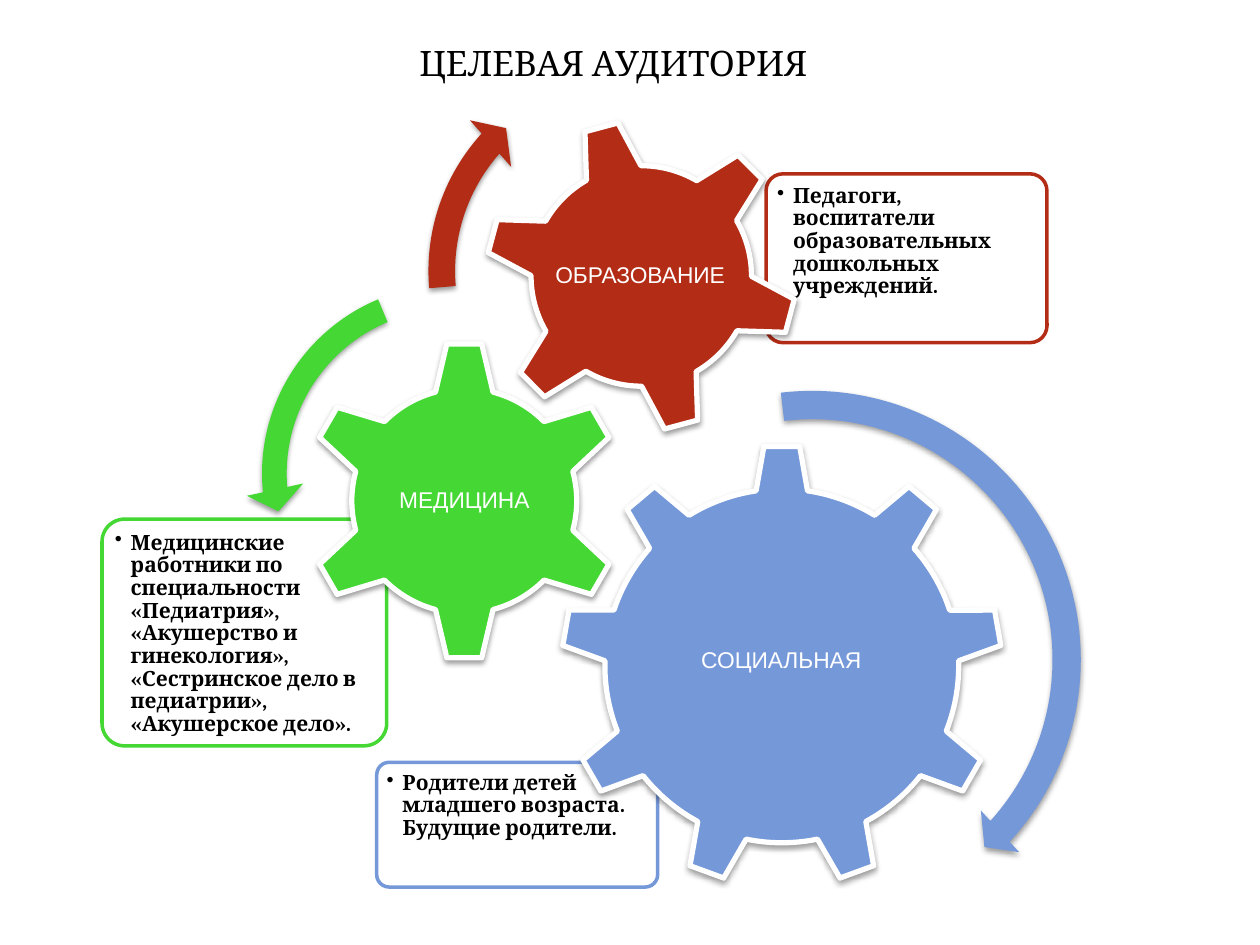
from lxml.etree import SubElement
from pptx import Presentation
from pptx.dml.color import RGBColor as RGB
from pptx.enum.shapes import MSO_SHAPE as Kind
from pptx.enum.text import MSO_ANCHOR as Anchor, PP_ALIGN as Align
from pptx.oxml.ns import qn
from pptx.util import Inches, Pt

theme = {
    "blue": "7598D9", "green": "45D834", "red": "B32C16",
    "white": "FFFFFF", "black": "000000",
    "serif": "Cambria", "sans": "Arial",
    "title": 20, "label": 13, "body": 12,
}

deck = Presentation()
deck.slide_width, deck.slide_height = Inches(10), Inches(7.5)
slide = deck.slides.add_slide(deck.slide_layouts[6])
cell = deck.slide_width / 100  # the grid has 100 columns and 75 rows


def write(shape, text, size, font, tint="black", bold=False, align=Align.LEFT,
          anchor=Anchor.TOP, pad=(0.5, 0.5), gap=0.9, dot=False):
    """Fill a shape with one paragraph; pad is (side, top) in grid cells."""
    frame = shape.text_frame
    frame.word_wrap = True
    frame.vertical_anchor = anchor
    frame.margin_left = frame.margin_right = int(pad[0] * cell)
    frame.margin_top = frame.margin_bottom = int(pad[1] * cell)
    para = frame.paragraphs[0]
    para.alignment, para.line_spacing = align, gap
    if dot:
        props = para._p.get_or_add_pPr()
        indent = int(1.25 * cell)
        props.set("marL", str(indent))
        props.set("indent", str(-indent))
        SubElement(props, qn("a:buChar"), char="•")
    run = para.add_run()
    run.text = text
    run.font.size, run.font.name, run.font.bold = Pt(theme[size]), theme[font], bold
    run.font.color.rgb = RGB.from_string(theme[tint])


def draw(kind, box, fill=None, line=None, width=0, turn=0, adjust=(), shade=False):
    """Add a preset shape whose box is given in grid cells."""
    shape = slide.shapes.add_shape(kind, *(int(n * cell) for n in box))
    shape.rotation = turn
    for i, value in enumerate(adjust):
        shape.adjustments[i] = value
    for part, tint in ((shape.fill, fill), (shape.line.fill, line)):
        if tint:
            part.solid()
            part.fore_color.rgb = RGB.from_string(theme[tint])
        else:
            part.background()
    if line:
        shape.line.width = Pt(width)
    shape.shadow.inherit = False
    if shade:
        effects = shape._element.spPr.find(qn("a:effectLst"))
        outer = SubElement(effects, qn("a:outerShdw"), blurRad=str(Pt(3.1)),
                           dist=str(Pt(1.6)), dir="5400000", rotWithShape="0")
        color = SubElement(outer, qn("a:srgbClr"), val=theme["black"])
        SubElement(color, qn("a:alpha"), val="38000")
    return shape


title = draw(Kind.RECTANGLE, (32.3, 2.8, 51, 7.6))
write(title, "ЦЕЛЕВАЯ АУДИТОРИЯ", "title", "serif", align=Align.JUSTIFY,
      pad=(1, 0.5), gap=1)

# tint, box, text
cards = [
    ("blue", (29.9, 60.5, 22.3, 9.9),
     "Родители детей младшего возраста. Будущие родители."),
    ("green", (8.1, 41.2, 22.6, 18),
     "Медицинские работники по специальности «Педиатрия», «Акушерство и "
     "гинекология», «Сестринское дело в педиатрии», «Акушерское дело»."),
    ("red", (60.8, 13.8, 22.3, 13.4),
     "Педагоги, воспитатели образовательных дошкольных учреждений."),
]
for tint, box, text in cards:
    card = draw(Kind.ROUNDED_RECTANGLE, box, line=tint, width=2, adjust=[0.1])
    write(card, text, "body", "serif", bold=True, dot=True)

# tint, kind, left, top, side, turn, label, label box
gears = [
    ("blue", Kind.GEAR_9, 44.5, 35.3, 35.1, 0, "СОЦИАЛЬНАЯ", (51.5, 43.5, 21, 18)),
    ("green", Kind.GEAR_6, 24.1, 27, 25.5, 0, "МЕДИЦИНА", (30.5, 33.5, 12.7, 12.6)),
    ("red", Kind.GEAR_6, 38.4, 9.4, 25, 345, "ОБРАЗОВАНИЕ", (43.8, 14.9, 14, 14)),
]
for tint, kind, left, top, side, turn, text, box in gears:
    draw(kind, (left, top, side, side), tint, "white", 3, turn, shade=True)
    write(draw(Kind.RECTANGLE, box), text, "label", "sans", "white",
          align=Align.CENTER, anchor=Anchor.MIDDLE, pad=(0.2, 0.2))

# tint, kind, left, top, side, adjustments
arrows = [
    ("blue", Kind.CIRCULAR_ARROW, 42, 29.9, 44.9, (0.05, 2.99, 25.45, 158, 0.05)),
    ("green", Kind.LEFT_CIRCULAR_ARROW, 19.5, 21.3, 32.6,
     (0.06, 4.3, 104.89, 148.38, 0.07)),
    ("red", Kind.CIRCULAR_ARROW, 32.6, 3.9, 35.2, (0.06, 3.94, 133.14, 105.08, 0.07)),
]
for tint, kind, left, top, side, adjust in arrows:
    draw(kind, (left, top, side, side), tint, adjust=adjust, shade=True)

deck.save("out.pptx")
